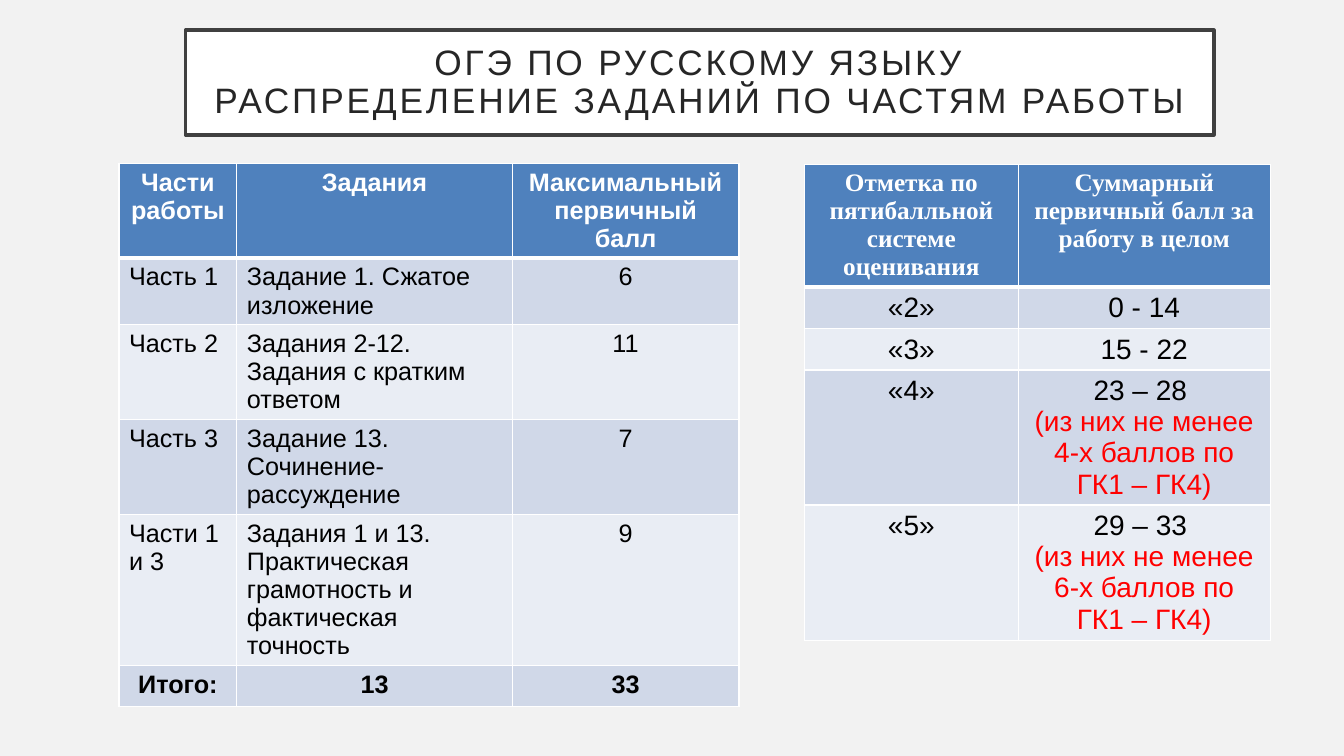
from dataclasses import dataclass

from lxml.etree import SubElement
from pptx import Presentation
from pptx.dml.color import RGBColor as RGB
from pptx.enum.shapes import MSO_SHAPE as SHAPE
from pptx.enum.text import MSO_ANCHOR as ANCHOR, PP_ALIGN as ALIGN
from pptx.oxml.ns import qn
from pptx.slide import Slide
from pptx.table import _Cell as Cell
from pptx.text.text import TextFrame
from pptx.util import Emu, Inches, Pt


@dataclass(frozen=True)
class Theme:
    background: str = "F2F2F2"
    white: str = "FFFFFF"
    frame: str = "404040"
    title: str = "262626"
    text: str = "000000"
    accent: str = "FF0000"
    header: str = "4F81BD"
    bands: tuple[str, str] = ("D0D8E8", "E9EDF4")
    sans: str = "Arial"
    serif: str = "Times New Roman"
    title_size: float = 25.2
    parts_size: float = 18
    marks_size: float = 20


@dataclass(frozen=True)
class TableSpec:
    """Positions, widths and heights are percentages of the slide."""
    left: float
    top: float
    widths: tuple[float, ...]
    heights: tuple[float, ...]
    rows: tuple[tuple[str, ...], ...]
    header_font: str
    size: float
    left_columns: tuple[int, ...] = ()
    bold_last: bool = False


THEME = Theme()
WIDTH, HEIGHT = Inches(13.33), Inches(7.5)

TITLE = "ОГЭ ПО РУССКОМУ ЯЗЫКУ\vРАСПРЕДЕЛЕНИЕ ЗАДАНИЙ ПО ЧАСТЯМ РАБОТЫ"

PARTS = TableSpec(
    left=8.85, top=21.6,
    widths=(8.78, 20.48, 16.88),
    heights=(12.4, 8.8, 12.53, 12.53, 20, 5.47),
    rows=(
        ("Части работы", "Задания", "Максимальный первичный балл"),
        ("Часть 1", "Задание 1. Сжатое изложение", "6"),
        ("Часть 2", "Задания 2-12.\nЗадания с кратким ответом", "11"),
        ("Часть 3", "Задание 13. Сочинение-рассуждение", "7"),
        ("Части 1 и 3", "Задания 1 и 13. Практическая грамотность "
                        "и фактическая точность", "9"),
        ("Итого:", "13", "33"),
    ),
    header_font=THEME.sans, size=THEME.parts_size,
    left_columns=(0, 1), bold_last=True,
)

MARKS = TableSpec(
    left=59.86, top=21.73,
    widths=(15.9, 18.75),
    heights=(16.27, 5.47, 5.47, 17.87, 17.87),
    rows=(
        ("Отметка по пятибалльной системе оценивания",
         "Суммарный первичный балл за работу в целом"),
        ("«2»", "0 - 14"),
        ("«3»", "15 - 22"),
        ("«4»", "23 – 28 \n(из них не менее 4-х баллов по ГК1 – ГК4)"),
        ("«5»", "29 – 33 \n(из них не менее 6-х баллов по ГК1 – ГК4)"),
    ),
    header_font=THEME.serif, size=THEME.marks_size,
)


def across(percent: float) -> Emu:
    return Emu(round(WIDTH * percent / 100))


def down(percent: float) -> Emu:
    return Emu(round(HEIGHT * percent / 100))


def write(tf: TextFrame, text: str, *, size: float, color: str = THEME.text,
          font: str = THEME.sans, bold: bool = False, align: ALIGN = ALIGN.CENTER,
          spacing: float | None = None, tracking: int = 0) -> None:
    """Newlines part paragraphs; bracketed paragraphs take the accent colour."""
    tf.word_wrap = True
    tf.text = text
    for p in tf.paragraphs:
        p.alignment = align
        p.line_spacing = spacing
        for r in p.runs:
            f = r.font
            f.name, f.size, f.bold = font, Pt(size), bold
            f.color.rgb = RGB.from_string(THEME.accent if r.text.startswith("(") else color)
            if tracking:
                r._r.get_or_add_rPr().set("spc", str(tracking * 100))


def add_borders(cell: Cell, top: int, bottom: int) -> None:
    tc_pr = cell._tc.get_or_add_tcPr()
    for side, width in (("L", 1), ("R", 1), ("T", top), ("B", bottom)):
        line = SubElement(tc_pr, qn(f"a:ln{side}"), w=str(Pt(width)))
        fill = SubElement(line, qn("a:solidFill"))
        SubElement(fill, qn("a:srgbClr"), val=THEME.white)


def add_title(s: Slide) -> None:
    sp = s.shapes.add_shape(SHAPE.RECTANGLE, across(13.8), down(4), across(76.52), down(13.87))
    sp.shadow.inherit = False
    sp.fill.solid()
    sp.fill.fore_color.rgb = RGB.from_string(THEME.white)
    sp.line.color.rgb = RGB.from_string(THEME.frame)
    sp.line.width = Pt(2.5)
    tf = sp.text_frame
    tf.vertical_anchor = ANCHOR.MIDDLE
    tf.margin_left = tf.margin_right = tf.margin_top = tf.margin_bottom = Inches(0.2)
    write(tf, TITLE, size=THEME.title_size, color=THEME.title, spacing=0.9, tracking=2)


def add_score_table(s: Slide, spec: TableSpec) -> None:
    last = len(spec.rows) - 1
    table = s.shapes.add_table(
        len(spec.rows), len(spec.widths), across(spec.left), down(spec.top),
        across(sum(spec.widths)), down(sum(spec.heights))).table
    for column, width in zip(table.columns, spec.widths):
        column.width = across(width)
    for row, height in zip(table.rows, spec.heights):
        row.height = down(height)

    for i, texts in enumerate(spec.rows):
        header = i == 0
        total = spec.bold_last and i == last
        for j, text in enumerate(texts):
            cell = table.cell(i, j)
            # A thick rule divides the header from the body
            add_borders(cell, top=3 if i == 1 else 1, bottom=3 if header else 1)
            cell.fill.solid()
            cell.fill.fore_color.rgb = RGB.from_string(
                THEME.header if header else THEME.bands[(i - 1) % 2])
            to_left = j in spec.left_columns and not (header or total)
            write(cell.text_frame, text,
                  size=THEME.parts_size if header else spec.size,
                  color=THEME.white if header else THEME.text,
                  font=spec.header_font if header else THEME.sans,
                  bold=header or total,
                  align=ALIGN.LEFT if to_left else ALIGN.CENTER)


def main() -> None:
    prs = Presentation()
    prs.slide_width, prs.slide_height = WIDTH, HEIGHT
    s = prs.slides.add_slide(prs.slide_layouts[6])
    s.background.fill.solid()
    s.background.fill.fore_color.rgb = RGB.from_string(THEME.background)

    add_title(s)
    for spec in (PARTS, MARKS):
        add_score_table(s, spec)
    prs.save("out.pptx")


if __name__ == "__main__":
    main()
